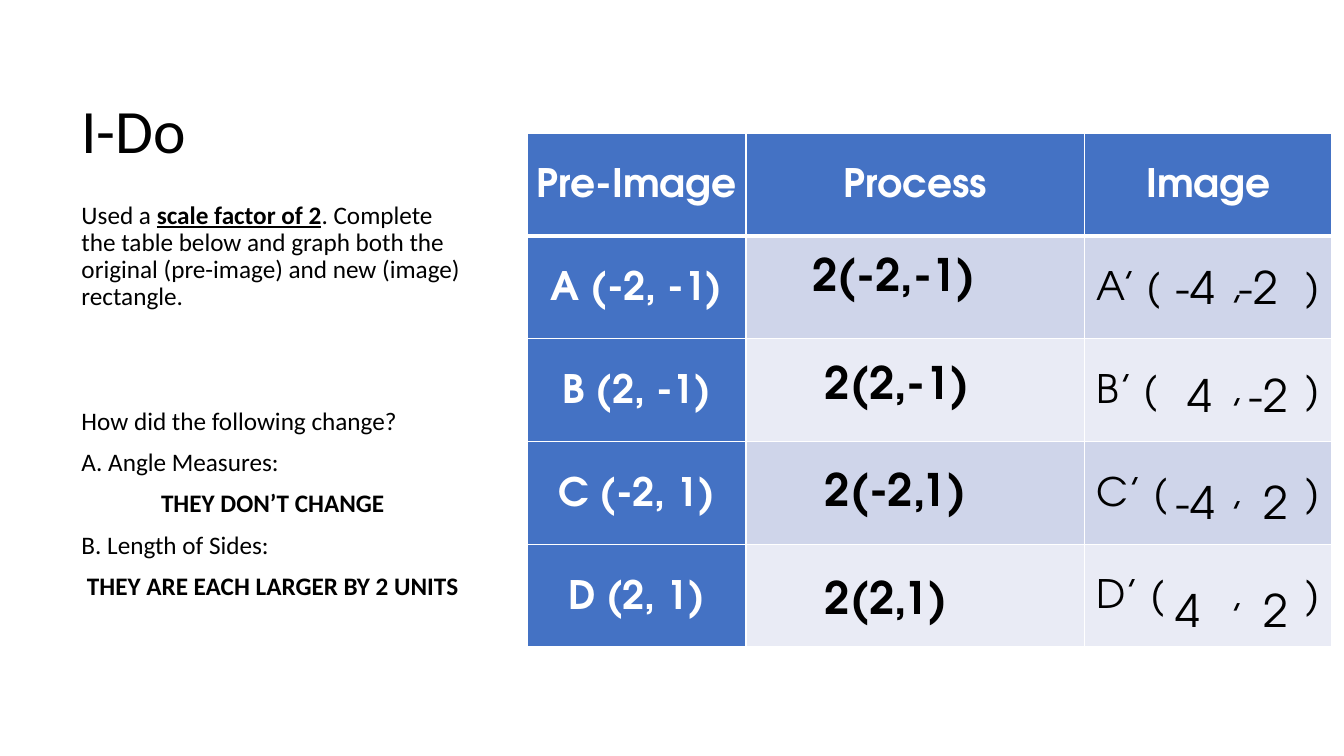
"""Build the I-Do slide: a dilation table with worked answers and questions."""
from lxml import etree
from pptx import Presentation
from pptx.dml.color import RGBColor
from pptx.enum.text import MSO_ANCHOR, PP_ALIGN
from pptx.oxml.ns import qn
from pptx.util import Inches, Pt

CENTER, LEFT = PP_ALIGN.CENTER, PP_ALIGN.LEFT
MIDDLE = MSO_ANCHOR.MIDDLE
BODY_FONT, MATH_FONT = "Calibri", "TeX Gyre Adventor"
COLORS = {"black": "000000", "white": "FFFFFF", "header": "4472C4",
          "odd": "CFD5EA", "even": "E9EBF5"}


def style(p, font, size, color="black", bold=False):
    for r in p.runs:
        r.font.name = font
        r.font.size = Pt(size)
        r.font.bold = bold
        r.font.color.rgb = RGBColor.from_string(COLORS[color])


def add_tabs(p, stops):
    tabs = etree.SubElement(p._p.get_or_add_pPr(), qn("a:tabLst"))
    for pos, align in stops:
        etree.SubElement(tabs, qn("a:tab"), pos=str(Inches(pos)), algn=align)


prs = Presentation()
prs.slide_width, prs.slide_height = Inches(13.33), Inches(7.5)
s = prs.slides.add_slide(prs.slide_layouts[6])

tf = s.shapes.add_textbox(Inches(0.71), Inches(0.69), Inches(5.61), Inches(1.27)).text_frame
tf.word_wrap = True
tf.vertical_anchor = MIDDLE
tf.text = "I-Do"
tf.paragraphs[0].line_spacing = 0.9
style(tf.paragraphs[0], BODY_FONT, 44)

questions = [
    (["Used a ", "scale factor of 2", ". Complete the table below and graph both the "
      "original (pre-image) and new (image) rectangle."], 10, False),
    (["How did the following change?"], 69.4, False),
    (["A. Angle Measures:"], 10, False),
    (["THEY DON’T CHANGE"], 10, True),
    (["B. Length of Sides:"], 10, False),
    (["THEY ARE EACH LARGER BY 2 UNITS"], 10, True),
]
tf = s.shapes.add_textbox(Inches(0.71), Inches(1.96), Inches(3.99), Inches(4.85)).text_frame
tf.word_wrap = True
for i, (parts, gap, is_answer) in enumerate(questions):
    p = tf.add_paragraph() if i else tf.paragraphs[0]
    for part in parts:
        p.add_run().text = part
    p.alignment = CENTER if is_answer else LEFT
    p.line_spacing = 0.9
    p.space_before = Pt(gap)
    style(p, BODY_FONT, 18, bold=is_answer)
scale_factor = tf.paragraphs[0].runs[1]
scale_factor.font.bold = scale_factor.font.underline = True

rows = [
    ("Pre-Image", "Process", "Image"),
    ("A (-2, -1)", "", "A’ (\t,\t)"),
    ("B (2, -1)", "", "B’ (\t,\t)"),
    ("C (-2, 1)", "", "C’ (\t,\t)"),
    ("D (2, 1)", "", "D’ (\t,\t)"),
]
col_widths = [2.17, 3.36, 2.45]
table = s.shapes.add_table(len(rows), len(col_widths), Inches(5.23), Inches(1.32),
                           Inches(7.98), Inches(5.12)).table
table.first_col = True
for column, width in zip(table.columns, col_widths):
    column.width = Inches(width)
for i, row in enumerate(rows):
    table.rows[i].height = Inches(1.02)
    for j, text in enumerate(row):
        cell = table.cell(i, j)
        is_header = i == 0 or j == 0
        is_blank_pair = i > 0 and j == 2
        tcPr = cell._tc.get_or_add_tcPr()
        for side in "LRTB":
            thick = (i == 0 and side == "B") or (i == 1 and side == "T")
            ln = etree.SubElement(tcPr, qn("a:ln" + side), w=str(Pt(3 if thick else 1)))
            fill = etree.SubElement(ln, qn("a:solidFill"))
            etree.SubElement(fill, qn("a:srgbClr"), val=COLORS["white"])
        cell.fill.solid()
        band = "header" if is_header else "odd" if i % 2 else "even"
        cell.fill.fore_color.rgb = RGBColor.from_string(COLORS[band])
        cell.vertical_anchor = MIDDLE
        cell.margin_left = Inches(0.12 if is_blank_pair else 0.07)
        cell.margin_right = Inches(0.07)
        cell.margin_top = cell.margin_bottom = 0
        p = cell.text_frame.paragraphs[0]
        p.text = text
        p.alignment = LEFT if is_blank_pair else CENTER
        p.line_spacing = 1.15
        if is_blank_pair:
            add_tabs(p, [(1.33, "l"), (2.07, "l")])
        style(p, MATH_FONT, 28, "white" if is_header else "black", is_header)

answers = [
    (7.96, 2.4, 2.3, True, ["2(-2,-1)", " 2(2,-1)", " 2(-2,1)", " 2(2,1)"]),
    (11.56, 2.53, 1.44, False, ["-4\t-2", " 4\t-2", "-4\t2", "4\t2"]),
]
for left, top, width, bold, lines in answers:
    tf = s.shapes.add_textbox(Inches(left), Inches(top), Inches(width), Inches(3.87)).text_frame
    tf.word_wrap = True
    for i, line in enumerate(lines):
        p = tf.add_paragraph() if i else tf.paragraphs[0]
        p.text = line
        p.space_before = Pt(38.4 if i else 0)
        if "\t" in line:
            add_tabs(p, [(1.12 if i else 1.02, "r")])
        style(p, MATH_FONT, 32, bold=bold)

prs.save("out.pptx")
